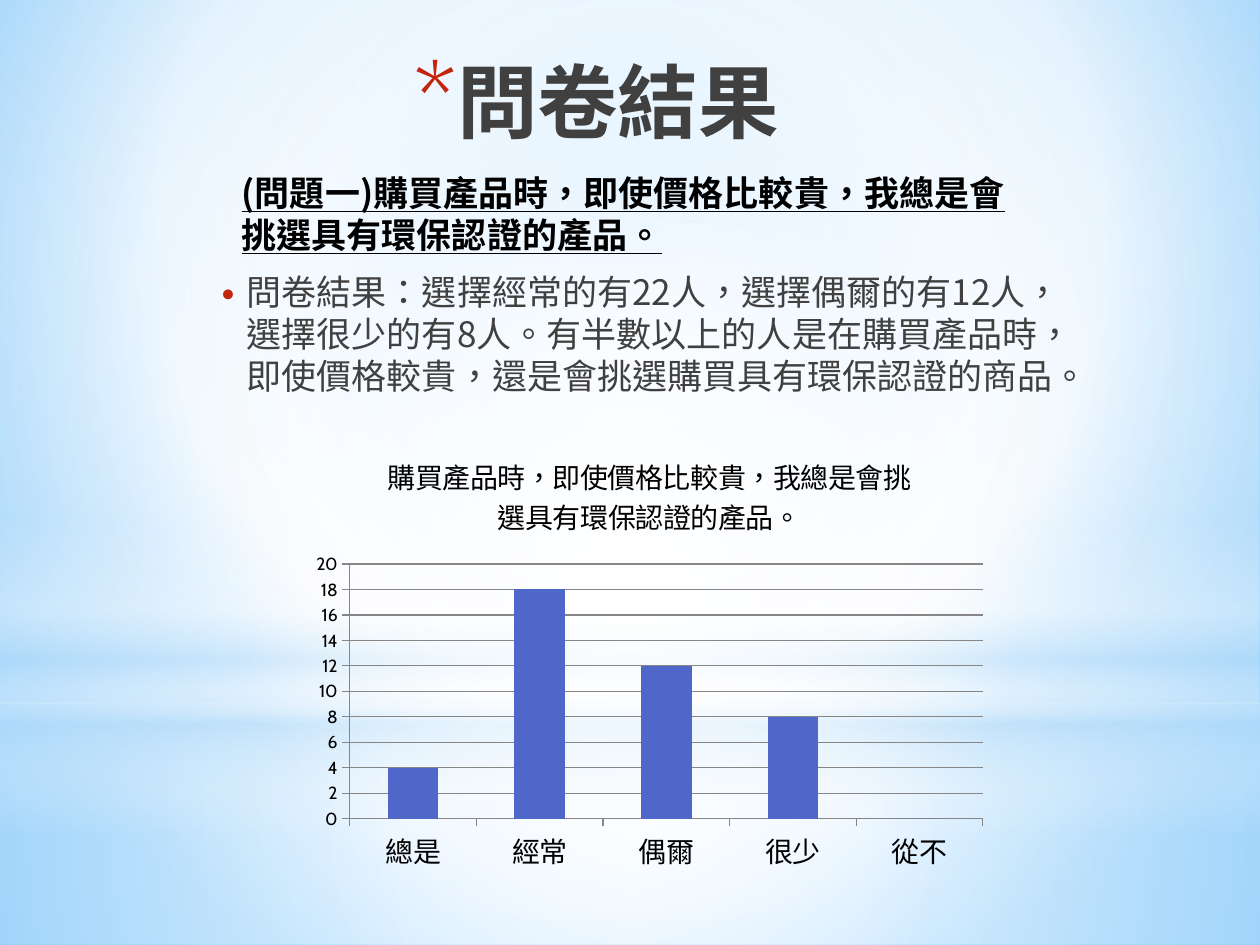
from lxml import etree
from pptx import Presentation
from pptx.chart.data import CategoryChartData
from pptx.dml.color import RGBColor
from pptx.enum.chart import XL_CHART_TYPE, XL_TICK_MARK
from pptx.enum.shapes import MSO_SHAPE
from pptx.enum.text import MSO_ANCHOR, PP_ALIGN
from pptx.oxml import parse_xml
from pptx.oxml.ns import nsdecls, qn
from pptx.util import Inches, Pt

RECTANGLE, ELLIPSE = MSO_SHAPE.RECTANGLE, MSO_SHAPE.OVAL
CENTER, LEFT = PP_ALIGN.CENTER, PP_ALIGN.LEFT
TICK_OUTSIDE = XL_TICK_MARK.OUTSIDE
COLUMNS = XL_CHART_TYPE.COLUMN_CLUSTERED

CJK_FONT, LATIN_FONT = "Noto Sans CJK SC", "Cabin"
LANGUAGE = "zh-TW"
COLORS = {
    "white": "FFFFFF", "haze": "B4DCFA", "sky": "9ED5FF", "deep_sky": "5BB9FF",
    "text": "404040", "black": "000000", "bullet": "C3260C",
    "bar": "4E67C8", "grid": "868686",
}

# Gradient stops: position, colour, opacity (all in percent)
BACKGROUND_STOPS = [(0, "sky", 100), (60, "white", 100), (100, "deep_sky", 100)]
MIDDLE = (50, 50, 50, 50)
GLOWS = [
    (RECTANGLE, (0, 5.58, 10, 1.92),
     [(0, "white", 91), (37, "white", 76), (100, "haze", 79)], MIDDLE),
    (RECTANGLE, (0, 0, 10, 5.58),
     [(0, "white", 89), (48, "white", 62), (100, "haze", 79)], MIDDLE),
    (RECTANGLE, (0, 4.12, 10, 2.5),
     [(0, "white", 0), (29, "white", 30), (45, "haze", 40),
      (55, "white", 26), (65, "haze", 60), (100, "white", 0)], None),
    (ELLIPSE, (0, 1.75, 10, 5.58), [(0, "white", 100), (56, "white", 0)], MIDDLE),
]

QUESTION = "購買產品時，即使價格比較貴，我總是會挑選具有環保認證的產品。"
TEXTS = [
    dict(box=(1.46, 0.36, 6.54, 1.25), text="問卷結果", size=46, line=55.5,
         color="text", bold=True, align=CENTER, indent=(0.35, -0.35),
         bullet=("*", 128)),
    dict(box=(1.61, 2.1, 7, 5.2),
         text="問卷結果：選擇經常的有22人，選擇偶爾的有12人，選擇很少的有8人。"
              "有半數以上的人是在購買產品時，即使價格較貴，還是會挑選購買具有環保認證的商品。",
         size=20, line=24, color="text", indent=(0.25, -0.2), bullet=("•", 130)),
    dict(box=(1.77, 1.31, 6.46, 0.77), text="(問題一)" + QUESTION, size=20, line=24,
         color="black", bold=True, underline=True, indent=(0.05, 0)),
]
ANSWERS = {"總是": 4, "經常": 18, "偶爾": 12, "很少": 8, "從不": 0}


def rgb(name):
    return RGBColor.from_string(COLORS[name])


def gradient(stops, focus):
    """Return a gradient fill: circular around focus, or vertical if it is None."""
    stop_xml = "".join(
        f'<a:gs pos="{position * 1000}"><a:srgbClr val="{COLORS[color]}">'
        f'<a:alpha val="{opacity * 1000}"/></a:srgbClr></a:gs>'
        for position, color, opacity in stops)
    if focus:
        edges = " ".join(f'{side}="{value * 1000}"' for side, value in zip("ltrb", focus))
        direction = f'<a:path path="circle"><a:fillToRect {edges}/></a:path>'
    else:
        direction = '<a:lin ang="5400000" scaled="0"/>'
    return parse_xml(f'<a:gradFill {nsdecls("a")} rotWithShape="1">'
                     f'<a:gsLst>{stop_xml}</a:gsLst>{direction}</a:gradFill>')


def swap_fill(properties, new_fill):
    properties.replace(properties.find(qn("a:solidFill")), new_fill)


def set_font(font, name, size, color):
    """Set Latin and East Asian type; the language decides how punctuation is drawn."""
    font.name, font.size = name, Pt(size)
    font.color.rgb = rgb(color)
    properties = font._rPr
    properties.set("lang", LANGUAGE)
    east_asian = etree.Element(qn("a:ea"), typeface=CJK_FONT)
    properties.find(qn("a:latin")).addnext(east_asian)


def add_bullet(properties, character, percent):
    color = etree.SubElement(properties, qn("a:buClr"))
    etree.SubElement(color, qn("a:srgbClr"), val=COLORS["bullet"])
    etree.SubElement(properties, qn("a:buSzPct"), val=str(percent * 1000))
    etree.SubElement(properties, qn("a:buFont"), typeface=LATIN_FONT)
    etree.SubElement(properties, qn("a:buChar"), char=character)


def add_text(slide, box, text, size, line, color, indent, bold=False,
             underline=False, align=LEFT, bullet=None):
    frame = slide.shapes.add_textbox(*map(Inches, box)).text_frame
    frame.word_wrap = True
    frame.vertical_anchor = MSO_ANCHOR.TOP
    paragraph = frame.paragraphs[0]
    paragraph.alignment = align
    paragraph.line_spacing = Pt(line)
    properties = paragraph._p.get_or_add_pPr()
    margin, first_line = indent
    properties.set("marL", str(Inches(margin)))
    properties.set("indent", str(Inches(first_line)))
    if bullet:
        add_bullet(properties, *bullet)
    run = paragraph.add_run()
    run.text = text
    set_font(run.font, CJK_FONT, size, color)
    run.font.bold, run.font.underline = bold, underline


def add_answer_chart(slide):
    data = CategoryChartData()
    data.categories = list(ANSWERS)
    data.add_series("Series 1", list(ANSWERS.values()))
    box = map(Inches, (2.4, 3.44, 5.51, 3.54))
    chart = slide.shapes.add_chart(COLUMNS, *box, data).chart
    set_font(chart.font, LATIN_FONT, 10, "black")
    chart.has_legend = False
    chart.has_title = True
    title = chart.chart_title
    title.include_in_layout = False
    run = title.text_frame.paragraphs[0].add_run()
    run.text = QUESTION
    set_font(run.font, CJK_FONT, 16, "black")
    run.font.bold = False

    category_axis, value_axis = chart.category_axis, chart.value_axis
    value_axis.minimum_scale, value_axis.maximum_scale = 0, 20
    value_axis.major_unit = 2
    value_axis.has_major_gridlines = True
    for axis in (category_axis, value_axis):
        axis.major_tick_mark = TICK_OUTSIDE
    for part in (category_axis, value_axis, value_axis.major_gridlines):
        part.format.line.color.rgb = rgb("grid")
        part.format.line.width = Pt(0.75)
    set_font(category_axis.tick_labels.font, CJK_FONT, 16, "black")

    plot = chart.plots[0]
    plot.gap_width = 150
    plot.vary_by_categories = False
    fill = plot.series[0].format.fill
    fill.solid()
    fill.fore_color.rgb = rgb("bar")


def main():
    presentation = Presentation()
    presentation.slide_width, presentation.slide_height = Inches(10), Inches(7.5)
    slide = presentation.slides.add_slide(presentation.slide_layouts[6])

    slide.background.fill.solid()
    background = slide.element.find(".//" + qn("p:bgPr"))
    swap_fill(background, gradient(BACKGROUND_STOPS, (20, 10, 20, 60)))

    for kind, box, stops, focus in GLOWS:
        shape = slide.shapes.add_shape(kind, *map(Inches, box))
        shape.shadow.inherit = False
        shape.line.fill.background()
        shape.fill.solid()
        swap_fill(shape._element.spPr, gradient(stops, focus))

    title, answer, question = TEXTS
    add_text(slide, **title)
    add_text(slide, **answer)
    add_answer_chart(slide)
    add_text(slide, **question)
    presentation.save("out.pptx")


if __name__ == "__main__":
    main()
